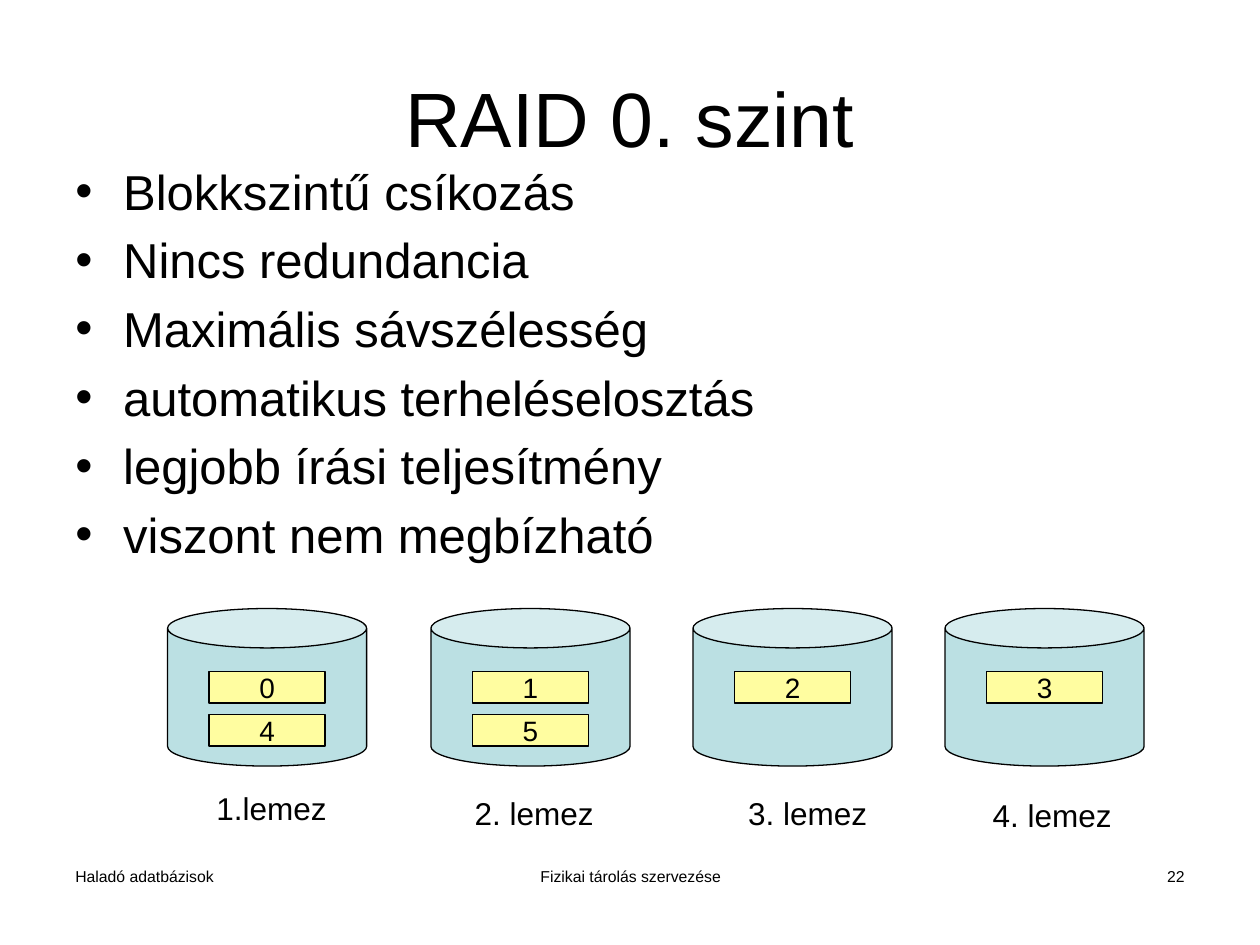
from pptx import Presentation
from pptx.dml.color import RGBColor
from pptx.enum.shapes import MSO_SHAPE as Shape
from pptx.enum.text import MSO_ANCHOR as Anchor, PP_ALIGN as Align
from pptx.oxml.ns import qn
from pptx.util import Inches, Pt
from lxml.etree import SubElement as Sub

INK, BLUE, CREAM = "000000", "BBE0E3", "FFFDA0"
POINTS = [
    "Blokkszintű csíkozás",
    "Nincs redundancia",
    "Maximális sávszélesség",
    "automatikus terheléselosztás",
    "legjobb írási teljesítmény",
    "viszont nem megbízható",
]
# Left edge of each disk, its blocks, its label and the label's offset and width
DISKS = [
    (1.33, "04", "1.lemez", (0.28, 1.38), 1.09),
    (3.42, "15", "2. lemez", (0.24, 1.42), 1.16),
    (5.5, "2", "3. lemez", (0.33, 1.42), 1.16),
    (7.5, "3", "4. lemez", (0.27, 1.44), 1.16),
]


def color(code):
    return RGBColor.from_string(code)


def write(frame, text, size, align=Align.LEFT, anchor=Anchor.TOP, wrap=True):
    frame.text = text
    frame.word_wrap = wrap
    frame.vertical_anchor = anchor
    for para in frame.paragraphs:
        para.alignment = align
        for run in para.runs:
            run.font.name = "Arial"
            run.font.size = Pt(size)
            run.font.color.rgb = color(INK)


def add_text(slide, box, text, size, **style):
    frame = slide.shapes.add_textbox(*map(Inches, box)).text_frame
    write(frame, text, size, **style)
    return frame


def add_solid(slide, kind, box, fill):
    shape = slide.shapes.add_shape(kind, *map(Inches, box))
    shape.shadow.inherit = False
    shape.fill.solid()
    shape.fill.fore_color.rgb = color(fill)
    shape.line.color.rgb = color(INK)
    shape.line.width = Pt(0.75)
    return shape


def add_points(slide, box):
    frame = add_text(slide, box, "\n".join(POINTS), 28)
    for para in frame.paragraphs:
        props = para._p.get_or_add_pPr()
        props.set("marL", str(Inches(0.38)))
        props.set("indent", str(Inches(-0.38)))
        space = Sub(props, qn("a:spcBef"))
        Sub(space, qn("a:spcPct"), val="20000")
        Sub(props, qn("a:buFont"), typeface="Arial")
        Sub(props, qn("a:buChar"), char="•")


def add_disk(slide, box, blocks, label, shift, label_width):
    left, top, width, height = box
    can = add_solid(slide, Shape.CAN, box, BLUE)
    can.adjustments[0] = 0.25
    block_width = 0.92
    block_left = left + (width - block_width) / 2
    for row, name in enumerate(blocks):
        place = (block_left, top + 0.5 + row * 0.34, block_width, 0.25)
        block = add_solid(slide, Shape.RECTANGLE, place, CREAM)
        write(block.text_frame, name, 16, align=Align.CENTER,
              anchor=Anchor.MIDDLE, wrap=False)
    place = (left + shift[0], top + shift[1], label_width, 0.4)
    add_text(slide, place, label, 18, align=Align.CENTER, wrap=False)


def add_footer(slide, top, height):
    for left, width, text, align in (
        (0.5, 2.33, "Haladó adatbázisok", Align.LEFT),
        (3.42, 3.17, "Fizikai tárolás szervezése", Align.CENTER),
        (7.17, 2.33, "22", Align.RIGHT),
    ):
        add_text(slide, (left, top, width, height), text, 9, align=align)


def main():
    deck = Presentation()
    deck.slide_width, deck.slide_height = Inches(10), Inches(7.5)
    slide = deck.slides.add_slide(deck.slide_layouts[6])
    add_footer(slide, 6.83, 0.52)
    add_text(slide, (0.5, 0.3, 9, 1.25), "RAID 0. szint", 44,
             align=Align.CENTER, anchor=Anchor.MIDDLE)
    add_points(slide, (0.5, 1.23, 9, 2.95))
    for left, *parts in DISKS:
        add_disk(slide, (left, 4.83, 1.58, 1.25), *parts)
    deck.save("out.pptx")


if __name__ == "__main__":
    main()
